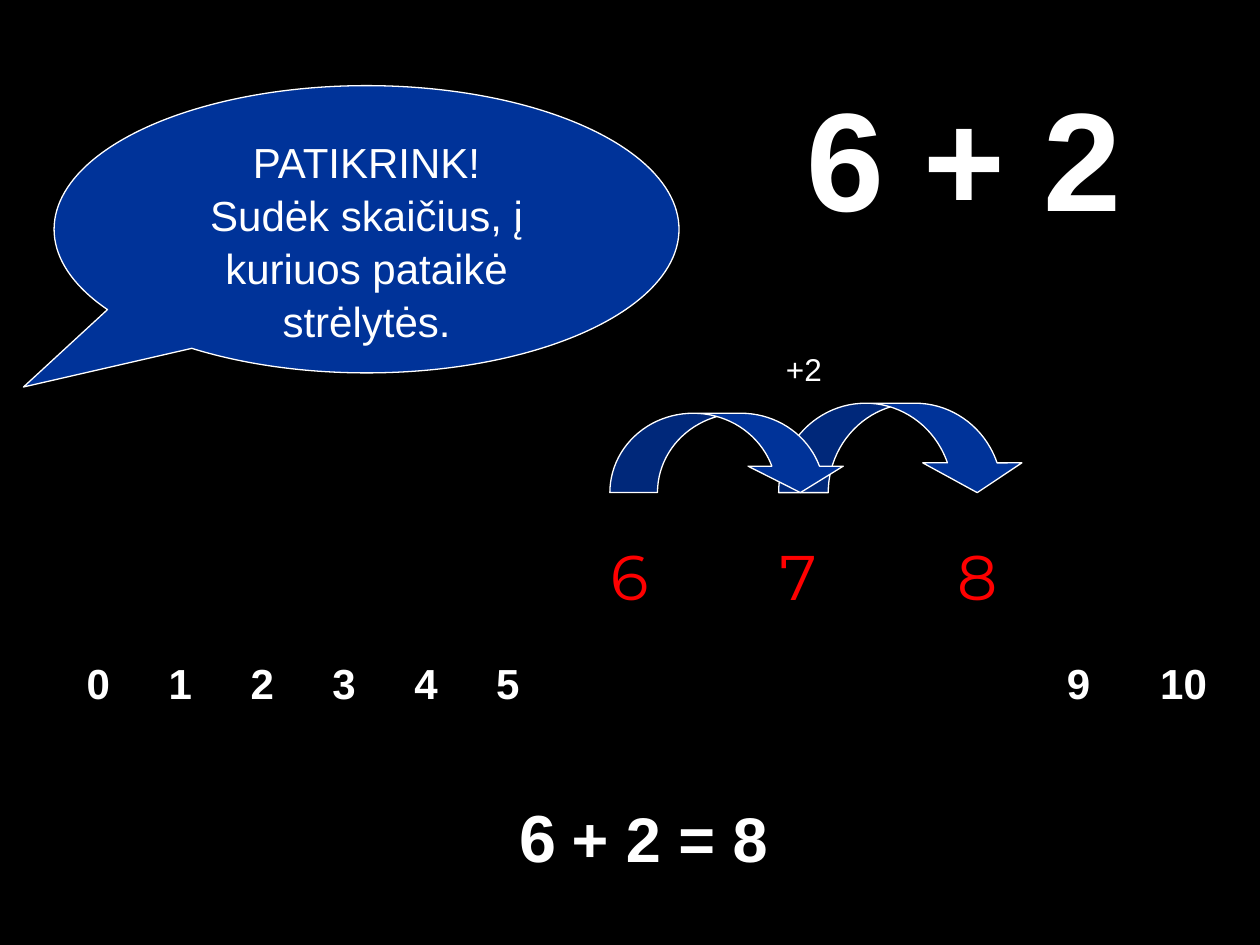
from lxml.etree import SubElement
from pptx import Presentation
from pptx.dml.color import RGBColor
from pptx.enum.shapes import MSO_SHAPE
from pptx.enum.text import MSO_ANCHOR, MSO_AUTO_SIZE, PP_ALIGN
from pptx.oxml.ns import qn
from pptx.util import Inches, Pt

WHITE, BLUE, RED, BLACK = "FFFFFF", "003399", "FF0000", "000000"

HINT = ["PATIKRINK!", "Sudėk skaičius, į kuriuos pataikė strėlytės."]
TASK = [("6 + 2", 80)]
ANSWER = [("6", 38), (" ", 32), ("+ 2 = 8", 36)]
STEP = "+2"
LOW_NUMBERS = "0\t1\t2\t3\t4\t5"
HIGH_NUMBERS = "\t9\t10"
LOW_STOPS = [0.65 * n for n in range(1, 6)]
HIGH_STOPS = [0.14, 0.88]
HIT_NUMBERS = [("6", 4.68), ("7", 6.02), ("8", 7.44)]
JUMPS = [
    ((6.18, 3.2, 1.97, 0.71), (0.555, 1.109, 0.333)),
    ((4.84, 3.28, 1.89, 0.63), (0.6, 1.2, 0.333)),
]


def color(value):
    return RGBColor.from_string(value)


def inches(box):
    return [Inches(length) for length in box]


def outline(run):
    line = SubElement(run.font._element, qn("a:ln"), w=str(Pt(0.75)))
    fill = SubElement(line, qn("a:solidFill"))
    SubElement(fill, qn("a:srgbClr"), val=WHITE)
    run.font._element.insert(0, line)


def write(frame, text, size=24, font="Arial", ink=WHITE, bold=False,
          align=PP_ALIGN.LEFT, wrap=True, indent=0.1, before=50, stops=(),
          spacing=None, outlined=False):
    frame.word_wrap = wrap
    frame.auto_size = MSO_AUTO_SIZE.NONE
    frame.vertical_anchor = MSO_ANCHOR.TOP
    frame.margin_left = Inches(indent)
    paragraphs = text if isinstance(text, list) else [text]
    if isinstance(paragraphs[0], tuple):
        paragraphs = [paragraphs]
    for index, content in enumerate(paragraphs):
        paragraph = frame.add_paragraph() if index else frame.paragraphs[0]
        paragraph.alignment = align
        paragraph.line_spacing = spacing
        properties = paragraph._p.get_or_add_pPr()
        if before:
            gap = SubElement(properties, qn("a:spcBef"))
            SubElement(gap, qn("a:spcPct"), val=str(before * 1000))
        if stops:
            tabs = SubElement(properties, qn("a:tabLst"))
            for stop in stops:
                SubElement(tabs, qn("a:tab"), pos=str(Inches(stop)), algn="l")
        runs = content if isinstance(content, list) else [(content, size)]
        for words, points in runs:
            run = paragraph.add_run()
            run.text = words
            run.font.size = Pt(points)
            run.font.name = font
            run.font.bold = bold
            run.font.color.rgb = color(ink)
            if outlined:
                outline(run)


def add_text(slide, box, text, **style):
    write(slide.shapes.add_textbox(*inches(box)).text_frame, text, **style)


def add_blue(slide, preset, box, adjustments):
    shape = slide.shapes.add_shape(preset, *inches(box))
    for index, value in enumerate(adjustments):
        shape.adjustments[index] = value
    shape.shadow.inherit = False
    shape.fill.solid()
    shape.fill.fore_color.rgb = color(BLUE)
    shape.line.color.rgb = color(WHITE)
    shape.line.width = Pt(0.75)
    return shape


def main():
    deck = Presentation()
    deck.slide_width, deck.slide_height = Inches(10), Inches(7.5)
    slide = deck.slides.add_slide(deck.slide_layouts[5])
    slide.background.fill.solid()
    slide.background.fill.fore_color.rgb = color(BLACK)

    task = slide.shapes.title
    task.left, task.top, task.width, task.height = inches((6.18, 0.52, 3.23, 1.43))
    write(task.text_frame, TASK, bold=True, indent=0.22)

    add_text(slide, (0.59, 5.17, 3.86, 0.5), LOW_NUMBERS, bold=True, stops=LOW_STOPS)
    add_text(slide, (5.79, 2.73, 1.18, 0.4), STEP, size=18, align=PP_ALIGN.CENTER)
    hint = add_blue(slide, MSO_SHAPE.OVAL_CALLOUT, (0.43, 0.68, 4.96, 2.28),
                    (-0.549, 0.549))
    write(hint.text_frame, HINT, align=PP_ALIGN.CENTER, before=0, spacing=1.05)
    add_text(slide, (3.9, 6.27, 2.6, 0.73), ANSWER, bold=True, indent=0.22)
    for number, left in HIT_NUMBERS:
        add_text(slide, (left, 4.22, 0.63, 1.59), number, size=36,
                 font="Montserrat", ink=RED, align=PP_ALIGN.CENTER,
                 wrap=False, before=0, outlined=True)
    add_text(slide, (8.23, 5.17, 1.5, 0.5), HIGH_NUMBERS, bold=True, stops=HIGH_STOPS)
    for box, adjustments in JUMPS:
        add_blue(slide, MSO_SHAPE.CURVED_DOWN_ARROW, box, adjustments)

    deck.save("out.pptx")


if __name__ == "__main__":
    main()
